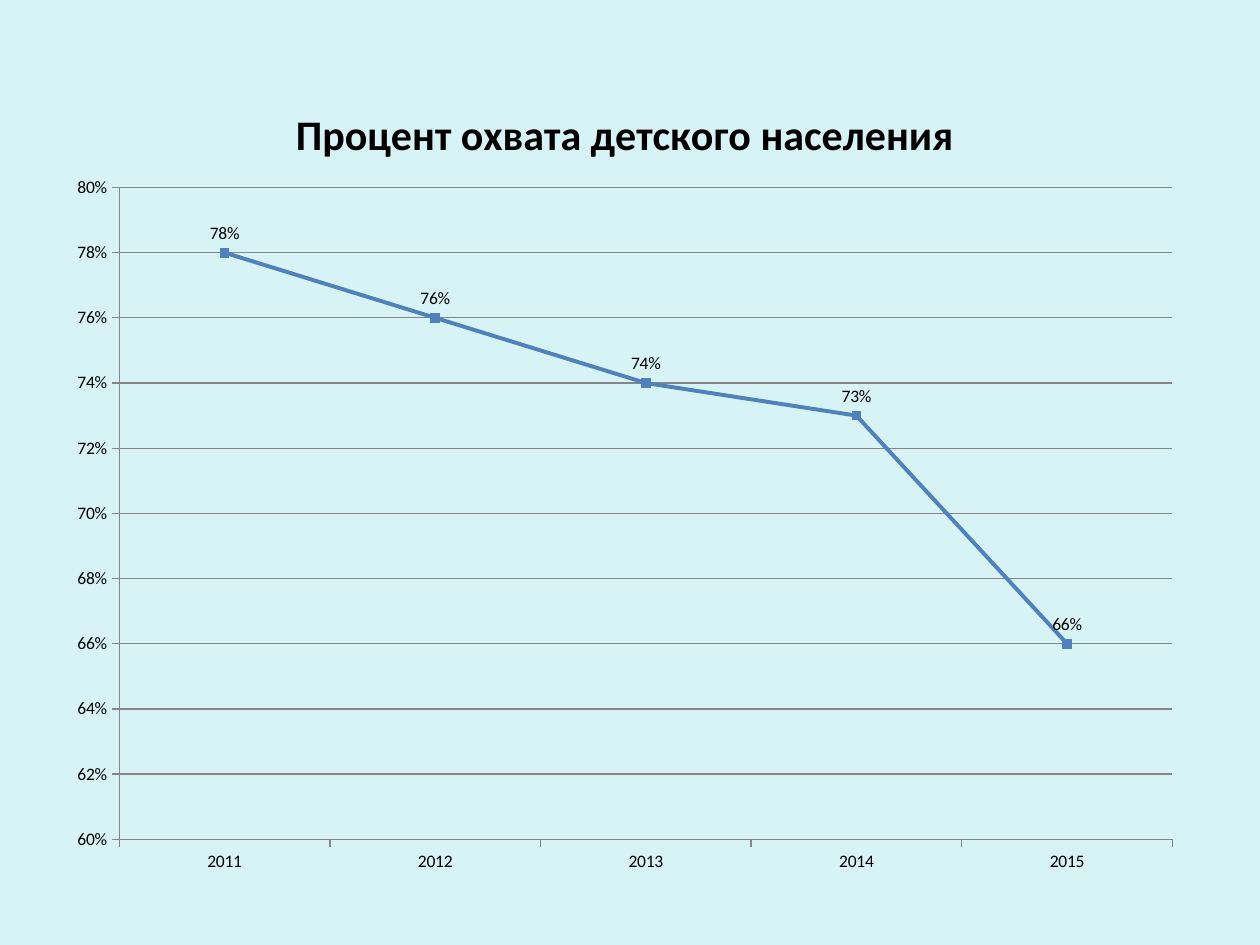
from lxml import etree
from pptx import Presentation
from pptx.chart.data import CategoryChartData
from pptx.dml.color import RGBColor
from pptx.enum import chart as ch
from pptx.util import Pt

COLORS = {"background": "D8F3F6", "text": "000000", "line": "4F81BD", "grid": "868686"}
FONT = "Calibri"
COVERAGE = {"2011": 0.78, "2012": 0.76, "2013": 0.74, "2014": 0.73, "2015": 0.66}


def rgb(name):
    return RGBColor.from_string(COLORS[name])


def style_font(font, size, bold=False):
    font.name = FONT
    font.size = Pt(size)
    font.bold = bold
    font.color.rgb = rgb("text")


def style_line(line, color, width):
    line.color.rgb = rgb(color)
    line.width = Pt(width)


def place_plot(chart, **fractions):
    plot_area = chart._chartSpace.chart.plotArea
    namespace = etree.QName(plot_area).namespace
    for old in plot_area.findall(f"{{{namespace}}}layout"):
        plot_area.remove(old)
    layout = etree.Element(f"{{{namespace}}}layout")
    manual = etree.SubElement(layout, f"{{{namespace}}}manualLayout")
    settings = {"layoutTarget": "inner", "xMode": "edge", "yMode": "edge", **fractions}
    for tag, value in settings.items():
        etree.SubElement(manual, f"{{{namespace}}}{tag}", val=str(value))
    plot_area.insert(0, layout)


def style_axes(chart):
    years, percents = chart.category_axis, chart.value_axis
    for axis in (years, percents):
        axis.major_tick_mark = ch.XL_TICK_MARK.OUTSIDE
        axis.minor_tick_mark = ch.XL_TICK_MARK.NONE
        style_line(axis.format.line, "grid", 0.75)
    years.has_major_gridlines = False
    percents.has_major_gridlines = True
    style_line(percents.major_gridlines.format.line, "grid", 0.75)
    percents.minimum_scale, percents.maximum_scale = 0.6, 0.8
    percents.major_unit = 0.02
    percents.tick_labels.number_format = "0%"
    percents.tick_labels.number_format_is_linked = False


def style_series(coverage):
    coverage.smooth = False
    style_line(coverage.format.line, "line", 2.25)
    marker = coverage.marker
    marker.style = ch.XL_MARKER_STYLE.SQUARE
    marker.size = 5
    marker.format.fill.solid()
    marker.format.fill.fore_color.rgb = rgb("line")
    style_line(marker.format.line, "line", 0.75)
    labels = coverage.data_labels
    labels.show_value = True
    labels.position = ch.XL_LABEL_POSITION.ABOVE
    labels.number_format = "0%"
    labels.number_format_is_linked = False
    style_font(labels.font, 10)


def add_coverage_chart(slide):
    data = CategoryChartData(number_format="0%")
    data.categories = list(COVERAGE)
    data.add_series("Series 1", list(COVERAGE.values()))
    chart = slide.shapes.add_chart(
        ch.XL_CHART_TYPE.LINE_MARKERS, Pt(31), Pt(43), Pt(652), Pt(465), data
    ).chart
    chart.has_legend = False
    chart.plots[0].vary_by_categories = False
    style_font(chart.font, 10)
    chart.has_title = True
    heading = chart.chart_title.text_frame
    heading.text = "Процент охвата детского населения"
    style_font(heading.paragraphs[0].font, 24, bold=True)
    chart.chart_title.include_in_layout = False
    style_axes(chart)
    style_series(chart.plots[0].series[0])
    place_plot(chart, x=0.057, y=0.138, w=0.923, h=0.801)


def main():
    deck = Presentation()
    deck.slide_width, deck.slide_height = Pt(720), Pt(540)
    slide = deck.slides.add_slide(deck.slide_layouts[6])
    slide.background.fill.solid()
    slide.background.fill.fore_color.rgb = rgb("background")
    add_coverage_chart(slide)
    deck.save("out.pptx")


if __name__ == "__main__":
    main()
